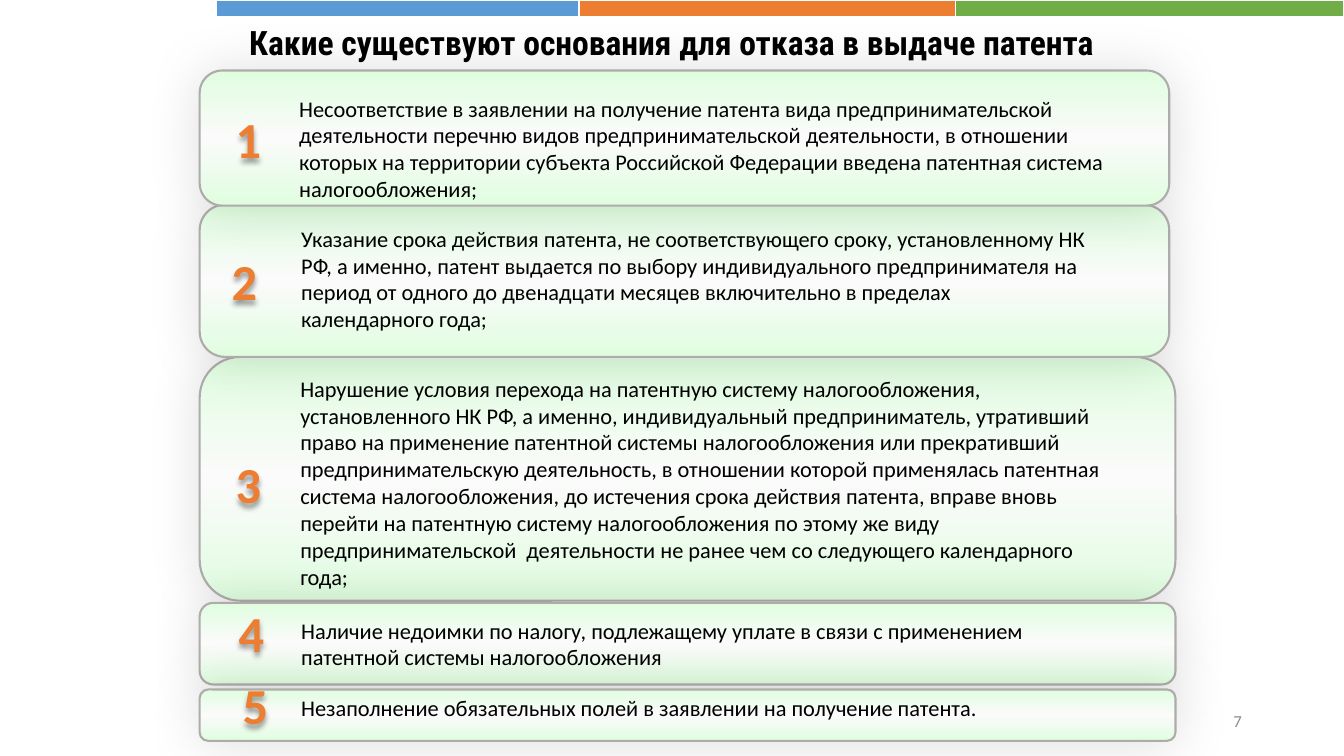
"""Build a slide listing the grounds for refusing a patent."""
import copy
import dataclasses
import typing

import pptx
import pptx.dml.color
import pptx.enum.shapes
import pptx.enum.text
import pptx.oxml
import pptx.oxml.ns
import pptx.util

Pt = pptx.util.Pt
Align = pptx.enum.text.PP_ALIGN
Anchor = pptx.enum.text.MSO_ANCHOR
Kind = pptx.enum.shapes.MSO_SHAPE


@dataclasses.dataclass(frozen=True)
class Theme:
    font: str = "Calibri"
    head: str = "Roboto Condensed"
    ink: str = "000000"
    grey: str = "8C8C8C"
    edge: str = "AFABAB"
    white: str = "FFFFFF"
    blue: str = "5B9BD5"
    orange: str = "ED7D31"
    green: str = "70AD47"
    mint: str = "E0FDE0"
    pale: str = "FBFBFB"
    title: int = 24
    body: int = 16
    digit: int = 36
    page: int = 12


THEME = Theme()


class Area(typing.NamedTuple):
    left: float
    top: float
    width: float
    height: float


class Bar(typing.NamedTuple):
    left: float
    width: float
    tint: str


class Reason(typing.NamedTuple):
    digit: str
    card: Area
    body: Area
    mark: Area
    text: str


BARS = [
    Bar(154.8, 258.5, THEME.blue),
    Bar(414, 269.3, THEME.orange),
    Bar(682.6, 277.4, THEME.green),
]

REASONS = [
    Reason("3", Area(142.6, 254.9, 697, 174.2), Area(207.4, 264.2, 594.7, 162.7),
           Area(161.3, 320.4, 33.1, 51.1),
           "Нарушение условия перехода на патентную систему налогообложения, "
           "установленного НК РФ, а именно, индивидуальный предприниматель, "
           "утративший право на применение патентной системы налогообложения "
           "или прекративший предпринимательскую деятельность, в отношении "
           "которой применялась патентная система налогообложения, до истечения "
           "срока действия патента, вправе вновь перейти на патентную систему "
           "налогообложения по этому же виду предпринимательской  деятельности "
           "не ранее чем со следующего календарного года;"),
    Reason("2", Area(142.6, 146.2, 692.6, 108.7), Area(208.1, 157, 574.6, 85),
           Area(158.4, 175, 33.1, 51.1),
           "Указание срока действия патента, не соответствующего сроку, "
           "установленному НК РФ, а именно, патент выдается по выбору "
           "индивидуального предпринимателя на период от одного до двенадцати "
           "месяцев включительно в пределах календарного года;"),
    Reason("1", Area(142.6, 50.4, 692.6, 96.5), Area(206.6, 64.1, 596.2, 85),
           Area(161.3, 73.4, 33.1, 51.1),
           "Несоответствие в заявлении на получение патента вида "
           "предпринимательской деятельности перечню видов предпринимательской "
           "деятельности, в отношении которых на территории субъекта Российской "
           "Федерации введена патентная система налогообложения;"),
    Reason("4", Area(142.6, 430.6, 697, 58.3), Area(208.1, 437, 595.4, 46.1),
           Area(163.4, 426.2, 33.1, 51.1),
           "Наличие недоимки по налогу, подлежащему уплате в связи с "
           "применением патентной системы налогообложения"),
    Reason("5", Area(142.6, 492.5, 697, 36.7), Area(208.1, 492.5, 690.5, 26.6),
           Area(166.3, 478.1, 33.1, 51.1),
           "Незаполнение обязательных полей в заявлении на получение патента."),
]


def paint(code: str) -> pptx.dml.color.RGBColor:
    """Turn a hex code into a colour."""
    return pptx.dml.color.RGBColor.from_string(code)


def span(area: Area) -> list:
    """Give the sides of an area as lengths."""
    return [Pt(side) for side in area]


def write(shape, text: str, *, size: int = THEME.body, tint: str = THEME.ink,
          font: str = THEME.font, bold: bool = False, align=Align.LEFT,
          anchor=Anchor.TOP, wrap: bool = True) -> None:
    """Put formatted text into a shape."""
    frame = shape.text_frame
    frame.word_wrap = wrap
    frame.auto_size = pptx.enum.text.MSO_AUTO_SIZE.NONE
    frame.vertical_anchor = anchor
    line = frame.paragraphs[0]
    line.alignment = align
    run = line.add_run()
    run.text = text
    run.font.size = Pt(size)
    run.font.name = font
    run.font.bold = bold
    run.font.color.rgb = paint(tint)


def shade(shape, blur: float, drop: float, alpha: int) -> None:
    """Cast a soft black shadow from a shape."""
    shape.shadow.inherit = False
    space = pptx.oxml.ns.nsdecls("a")
    cast = pptx.oxml.parse_xml(
        f'<a:outerShdw {space} blurRad="{Pt(blur)}" dist="{Pt(drop)}" '
        f'dir="5400000" algn="ctr" rotWithShape="0"><a:srgbClr val="{THEME.ink}">'
        f'<a:alpha val="{alpha * 1000}"/></a:srgbClr></a:outerShdw>')
    shape.element.spPr.find(pptx.oxml.ns.qn("a:effectLst")).append(cast)


def blend(shape) -> None:
    """Fill a shape from mint through pale and back to mint."""
    shape.fill.gradient()
    shape.fill.gradient_angle = 90
    for stop, place, tint in zip(shape.fill.gradient_stops, (0, 0.5),
                                 (THEME.mint, THEME.pale)):
        stop.position = place
        stop.color.rgb = paint(tint)
    stops = shape.element.spPr.find(".//" + pptx.oxml.ns.qn("a:gsLst"))
    last = copy.deepcopy(stops[0])
    last.set("pos", "100000")
    stops.append(last)


def outline(shape, tint: str, width: float) -> None:
    """Draw the border of a shape."""
    shape.line.color.rgb = paint(tint)
    shape.line.width = Pt(width)


def draw_bar(slide, bar: Bar) -> None:
    """Draw one band of the top strip."""
    area = Area(bar.left, 0, bar.width, 12.2)
    shape = slide.shapes.add_shape(Kind.RECTANGLE, *span(area))
    shape.shadow.inherit = False
    shape.fill.solid()
    shape.fill.fore_color.rgb = paint(bar.tint)
    outline(shape, THEME.white, 1)


def draw_reason(slide, item: Reason) -> None:
    """Draw a card with its text and number."""
    card = slide.shapes.add_shape(Kind.ROUNDED_RECTANGLE, *span(item.card))
    blend(card)
    outline(card, THEME.edge, 1.5)
    shade(card, 38, 0, 12)
    write(slide.shapes.add_textbox(*span(item.body)), item.text)
    mark = slide.shapes.add_textbox(*span(item.mark))
    write(mark, item.digit, size=THEME.digit, tint=THEME.orange, bold=True,
          wrap=False)
    shade(mark, 4, 3, 40)


def main() -> None:
    """Build and save the slide."""
    deck = pptx.Presentation()
    deck.slide_width, deck.slide_height = Pt(960), Pt(540)
    slide = deck.slides.add_slide(deck.slide_layouts[5])
    title = slide.shapes.title
    title.left, title.top, title.width, title.height = span(
        Area(34.6, 12.2, 895.7, 36))
    write(title, "Какие существуют основания для отказа в выдаче патента ",
          size=THEME.title, font=THEME.head, bold=True, align=Align.CENTER)
    for bar in BARS:
        draw_bar(slide, bar)
    page = slide.shapes.add_textbox(*span(Area(678.2, 500.4, 216, 28.8)))
    write(page, "7", size=THEME.page, tint=THEME.grey, align=Align.RIGHT,
          anchor=Anchor.MIDDLE)
    for item in REASONS:
        draw_reason(slide, item)
    deck.save("out.pptx")


if __name__ == "__main__":
    main()
